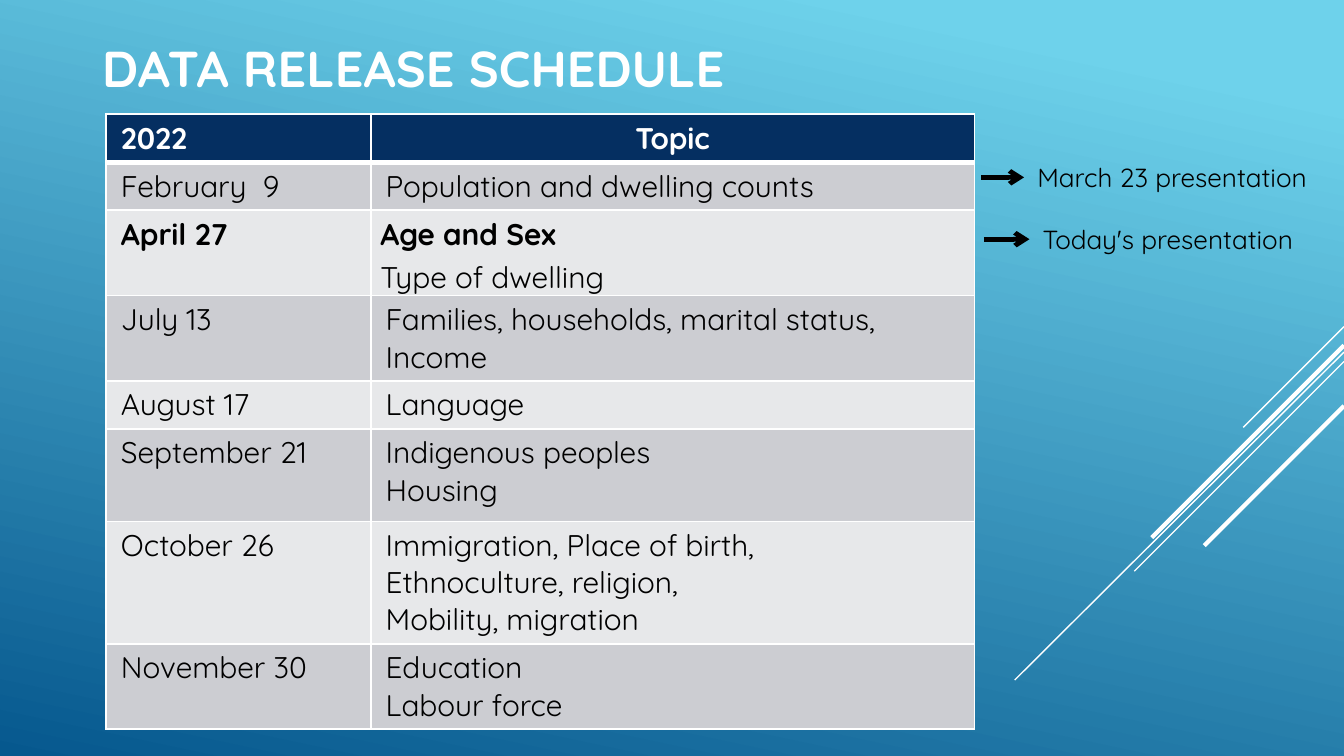
from lxml import etree
from pptx import Presentation
from pptx import util as u
from pptx.dml.color import RGBColor
from pptx.enum import shapes, text
from pptx.oxml.ns import qn

WHITE = RGBColor(0xFF, 0xFF, 0xFF)
BLACK = RGBColor(0, 0, 0)
NAVY = RGBColor(0x05, 0x2F, 0x61)
BAND_DARK = RGBColor(0xCC, 0xCD, 0xD2)
BAND_LIGHT = RGBColor(0xE7, 0xE8, 0xEA)
SKY = RGBColor(0x6E, 0xD2, 0xEB)
DEEP_BLUE = RGBColor(0x06, 0x58, 0x8E)
FONT = "Quicksand"


def add_run(paragraph, words, size, color, bold=False):
    run = paragraph.add_run()
    run.text = words
    run.font.name = FONT
    run.font.size = u.Pt(size)
    run.font.bold = bold
    run.font.color.rgb = color


def add_line(slide, start, end, color, width):
    points = [u.Inches(value) for value in (*start, *end)]
    line = slide.shapes.add_connector(shapes.MSO_CONNECTOR.STRAIGHT, *points)
    line.line.color.rgb = color
    line.line.width = u.Pt(width)
    etree.SubElement(line._element.spPr, qn("a:effectLst"))
    return line


# Widescreen slide, 16:9
presentation = Presentation()
presentation.slide_width = u.Inches(10)
presentation.slide_height = u.Inches(10 * 9 / 16)
slide = presentation.slides.add_slide(presentation.slide_layouts[5])

# Background gradient
background = slide.background.fill
background.gradient()
background.gradient_angle = 258
for stop, color, position in zip(background.gradient_stops, (SKY, DEEP_BLUE), (0.1, 1)):
    stop.color.rgb = color
    stop.position = position

# Diagonal lines at the right edge
for start_y, end_x, end_y, width in (
    (2.43, 9.25, 3.18, 0.75),
    (2.62, 7.55, 5.06, 0.75),
    (2.69, 8.44, 4.25, 0.75),
    (2.57, 8.57, 4.0, 2.25),
    (3.02, 8.96, 4.06, 2.25),
):
    add_line(slide, (10, start_y), (end_x, end_y), WHITE, width)

# Title
title = slide.shapes.title
title.left, title.top = u.Inches(0.35), u.Inches(0.16)
title.width, title.height = u.Inches(9.5), u.Inches(0.69)
frame = title.text_frame
frame.margin_left = u.Inches(0.41)
frame.vertical_anchor = text.MSO_ANCHOR.MIDDLE
frame.paragraphs[0].alignment = text.PP_ALIGN.LEFT
add_run(frame.paragraphs[0], "DATA RELEASE SCHEDULE", 27, WHITE, bold=True)

# Release table: height, date, topics
schedule = [
    (0.31, "2022", ["Topic"]),
    (0.31, "February  9", ["Population and dwelling counts"]),
    (0.56, "April 27", ["Age and Sex", "Type of dwelling"]),
    (0.56, "July 13", ["Families, households, marital status,", "Income"]),
    (0.31, "August 17", ["Language"]),
    (0.69, "September 21", ["Indigenous peoples", "Housing"]),
    (0.55, "October 26", ["Immigration, Place of birth,", "Ethnoculture, religion,",
                          "Mobility, migration"]),
    (0.55, "November 30", ["Education", "Labour force"]),
]
bold_entries = {"2022", "Topic", "April 27", "Age and Sex"}
table = slide.shapes.add_table(
    len(schedule), 2, u.Inches(0.79), u.Inches(0.85), u.Inches(6.46), u.Inches(4.42)
).table
table.columns[0].width = u.Inches(1.97)
table.columns[1].width = u.Inches(4.49)

for row, (height, date, topics) in enumerate(schedule):
    table.rows[row].height = u.Inches(height)
    for column, entries in enumerate(([date], topics)):
        cell = table.cell(row, column)
        tight = topics[0] == "Age and Sex" and column == 1
        cell.margin_left = cell.margin_right = u.Inches(0.07 if tight else 0.11)
        cell.margin_top = cell.margin_bottom = u.Inches(0 if tight else 0.04)
        cell.fill.solid()
        cell.fill.fore_color.rgb = NAVY if row == 0 else BAND_DARK if row % 2 else BAND_LIGHT

        for index, entry in enumerate(entries):
            paragraph = cell.text_frame.paragraphs[0] if index == 0 else cell.text_frame.add_paragraph()
            if tight:
                paragraph.line_spacing = 1.15
            if entry == "Topic":
                paragraph.alignment = text.PP_ALIGN.CENTER
            add_run(paragraph, entry, 16, BLACK if row else WHITE, entry in bold_entries)

        # Cell borders, thicker under the header
        properties = cell._tc.get_or_add_tcPr()
        for order, side in enumerate("LRTB"):
            thick = (row, side) in ((0, "B"), (1, "T"))
            border = etree.Element(qn(f"a:ln{side}"), w=str(u.Pt(3 if thick else 1)))
            fill = etree.SubElement(border, qn("a:solidFill"))
            etree.SubElement(fill, qn("a:srgbClr"), val=str(WHITE))
            properties.insert(order, border)

# Presentation labels, each with an arrow from the table
for words, left, top, width, arrow_left in (
    ("March 23 presentation", 7.62, 1.15, 2.38, 7.3),
    ("Today's presentation", 7.66, 1.61, 2.2, 7.32),
):
    label = slide.shapes.add_textbox(
        u.Inches(left), u.Inches(top), u.Inches(width), u.Inches(0.34))
    label.text_frame.word_wrap = True
    label.text_frame.auto_size = text.MSO_AUTO_SIZE.SHAPE_TO_FIT_TEXT
    add_run(label.text_frame.paragraphs[0], words, 14, BLACK)
    middle = top + 0.17
    arrow = add_line(slide, (arrow_left, middle), (left, middle), BLACK, 2.5)
    arrow.end_connect(label, 1)
    etree.SubElement(arrow.line._get_or_add_ln(), qn("a:tailEnd"), type="arrow")

presentation.save("out.pptx")
